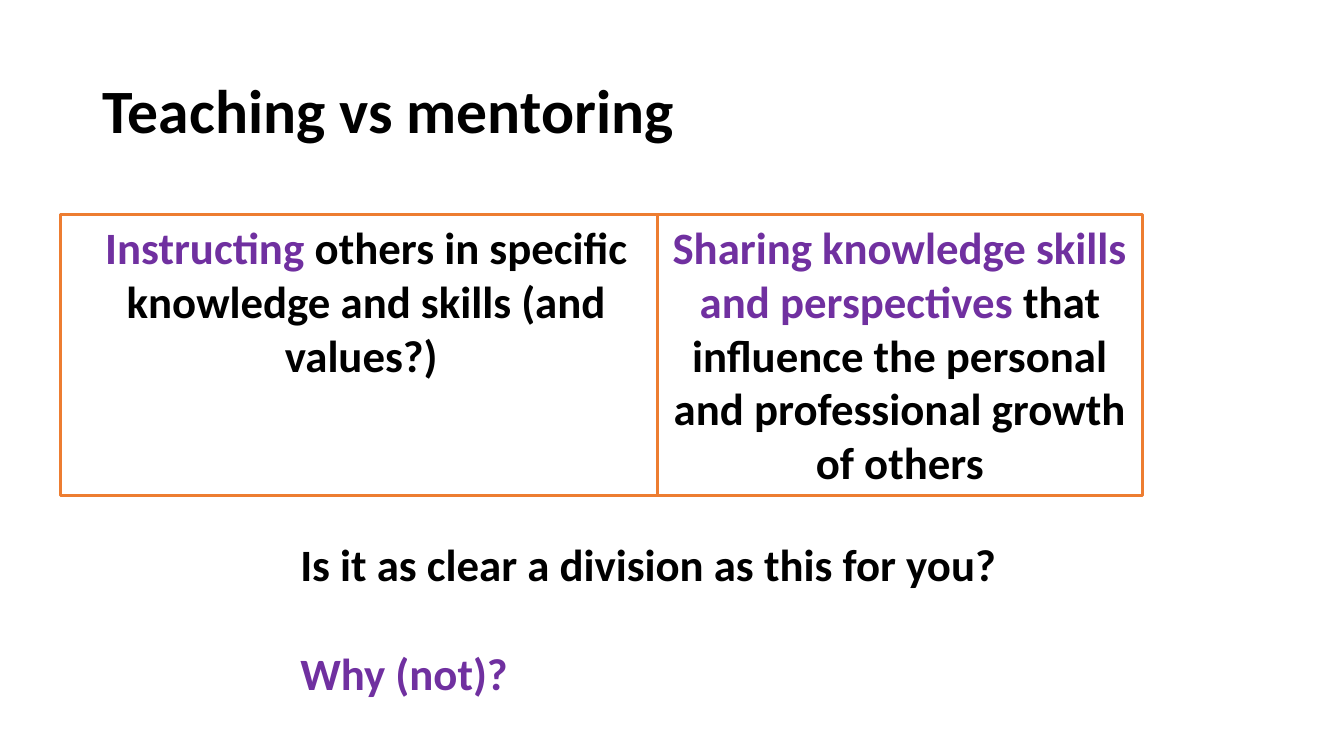
import dataclasses

import pptx
import pptx.dml.color
import pptx.enum.shapes
import pptx.enum.text
import pptx.util

Inches = pptx.util.Inches
Pt = pptx.util.Pt
Align = pptx.enum.text.PP_ALIGN
Anchor = pptx.enum.text.MSO_ANCHOR

COLORS = {"text": "000000", "accent": "7030A0", "border": "ED7D31", "fill": "FFFFFF"}
FONT = {"name": "Calibri", "bold": True}
TITLE_SIZE = Pt(44)
BODY_SIZE = Pt(32)
BOX_TOP, BOX_HEIGHT = 2.13, 2.79


@dataclasses.dataclass
class Definition:
    left: float
    width: float
    key_phrase: str
    rest: str


DEFINITIONS = [
    Definition(0.6, 6.07, "Instructing ",
               "others in specific knowledge and skills (and values?) "),
    Definition(6.52, 4.81, "Sharing knowledge skills and perspectives ",
               "that influence the personal and professional growth of others"),
]
QUESTIONS = [("Is it as clear a division as this for you?", "text"),
             ("Why (not)?", "accent")]


def rgb(key: str) -> pptx.dml.color.RGBColor:
    return pptx.dml.color.RGBColor.from_string(COLORS[key])


def set_attributes(target, values: dict) -> None:
    for name, value in values.items():
        setattr(target, name, value)


def add_run(p, text: str, color: str, size: int = BODY_SIZE) -> None:
    r = p.add_run()
    r.text = text
    set_attributes(r.font, FONT | {"size": size})
    r.font.color.rgb = rgb(color)


def add_title(s, text: str) -> None:
    sp = s.shapes.title
    set_attributes(sp, {"left": Inches(0.92), "top": Inches(0.4),
                        "width": Inches(11.5), "height": Inches(1.45)})
    sp.text_frame.vertical_anchor = Anchor.MIDDLE
    p = sp.text_frame.paragraphs[0]
    set_attributes(p, {"alignment": Align.LEFT, "line_spacing": 0.9})
    add_run(p, text, "text", TITLE_SIZE)


def add_definition(s, item: Definition) -> None:
    sp = s.shapes.add_shape(pptx.enum.shapes.MSO_SHAPE.RECTANGLE,
                            Inches(item.left), Inches(BOX_TOP),
                            Inches(item.width), Inches(BOX_HEIGHT))
    sp.shadow.inherit = False
    sp.fill.solid()
    sp.fill.fore_color.rgb = rgb("fill")
    sp.line.color.rgb = rgb("border")
    sp.line.width = Pt(2.25)
    tf = sp.text_frame
    set_attributes(tf, {"word_wrap": True, "vertical_anchor": Anchor.TOP})
    p = tf.paragraphs[0]
    p.alignment = Align.CENTER
    add_run(p, item.key_phrase, "accent")
    add_run(p, item.rest, "text")


def add_questions(s) -> None:
    sp = s.shapes.add_textbox(Inches(2.88), Inches(5.28), Inches(7.25), Inches(1.72))
    tf = sp.text_frame
    tf.word_wrap = True
    for i, (text, color) in enumerate(QUESTIONS):
        p = tf.add_paragraph() if i else tf.paragraphs[0]
        if i:
            p.space_before = Pt(39)
        add_run(p, text, color)


def main() -> None:
    prs = pptx.Presentation()
    set_attributes(prs, {"slide_width": Inches(13.33), "slide_height": Inches(7.5)})
    s = prs.slides.add_slide(prs.slide_layouts.get_by_name("Title Only"))
    add_title(s, "Teaching vs mentoring")
    for item in DEFINITIONS:
        add_definition(s, item)
    add_questions(s)
    prs.save("out.pptx")


if __name__ == "__main__":
    main()
